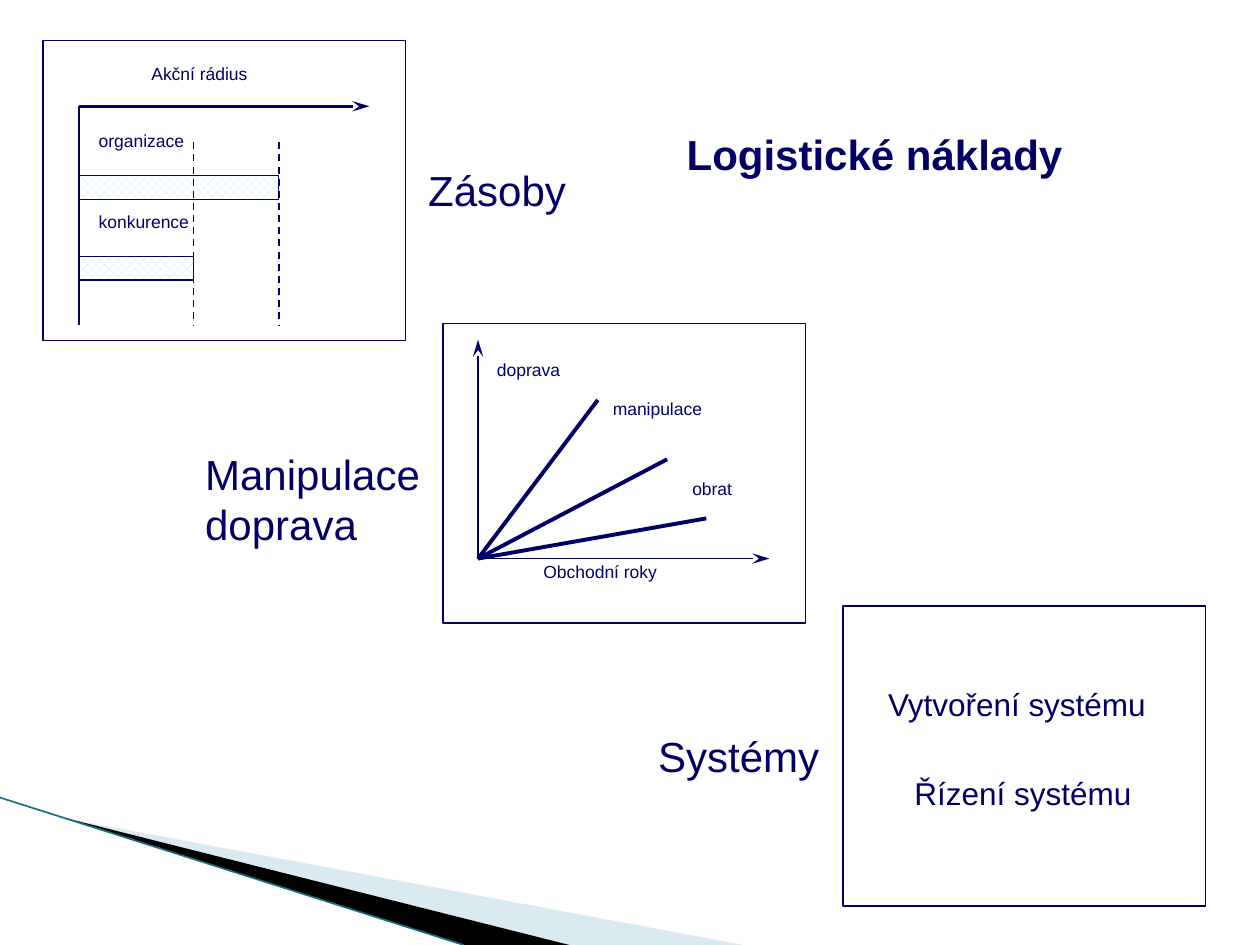
import dataclasses

import lxml.etree
import pptx
import pptx.dml.color
import pptx.enum.dml
import pptx.enum.shapes
import pptx.enum.text
import pptx.oxml.ns
import pptx.util

COLOURS = {
    "navy": "000066",
    "bar": "CCECFF",
    "white": "FFFFFF",
    "wedge": "A0CBDC",
    "black": "000000",
    "edge": "1B6E82",
}
FONT = "Arial"
RECTANGLE = pptx.enum.shapes.MSO_SHAPE.RECTANGLE
STRAIGHT = pptx.enum.shapes.MSO_CONNECTOR.STRAIGHT
DASH = pptx.enum.dml.MSO_LINE.DASH


@dataclasses.dataclass
class Box:
    """An area in inches whose inside is addressed by shares of its size."""
    left: float
    top: float
    width: float
    height: float

    def point(self, x, y):
        return (pptx.util.Inches(self.left + x * self.width),
                pptx.util.Inches(self.top + y * self.height))

    def size(self, x, y):
        return pptx.util.Inches(x * self.width), pptx.util.Inches(y * self.height)


PAGE = Box(0, 0, 10, 7.5)


def colour(name):
    return pptx.dml.color.RGBColor.from_string(COLOURS[name])


def add_element(parent, tag, **attributes):
    return lxml.etree.SubElement(parent, pptx.oxml.ns.qn(tag), **attributes)


def write(shape, text, size, bold=False, align=None):
    frame = shape.text_frame
    frame.word_wrap = False
    frame.auto_size = pptx.enum.text.MSO_AUTO_SIZE.SHAPE_TO_FIT_TEXT
    frame.vertical_anchor = pptx.enum.text.MSO_ANCHOR.TOP
    para = frame.paragraphs[0]
    para.alignment = align or pptx.enum.text.PP_ALIGN.LEFT
    for index, line in enumerate(text.split("\n")):
        if index:
            para.add_line_break()
        span = para.add_run()
        span.text = line
        span.font.name = FONT
        span.font.size = pptx.util.Pt(size)
        span.font.bold = bold
        span.font.color.rgb = colour("navy")


def add_label(shapes, box, text, x, y, width, size=10, align=None):
    height = 0.5 if size > 20 else 0.4
    label = shapes.add_textbox(*box.point(x, y), box.size(width, 0)[0],
                               pptx.util.Inches(height))
    write(label, text, size, align=align)


def add_line(shapes, box, start, end, width, name="navy", dash=None, arrow=False):
    line = shapes.add_connector(STRAIGHT, *box.point(*start), *box.point(*end))
    line.line.width = pptx.util.Pt(width)
    line.line.color.rgb = colour(name)
    if dash:
        line.line.dash_style = dash
    if arrow:
        add_element(line.line._get_or_add_ln(), "a:tailEnd", type="stealth", len="lg")
    add_element(line._element.spPr, "a:effectLst")


def add_rectangle(shapes, box, x=0, y=0, width=1, height=1, patterned=False):
    shape = shapes.add_shape(RECTANGLE, *box.point(x, y), *box.size(width, height))
    shape.shadow.inherit = False
    shape.line.color.rgb = colour("navy")
    shape.line.width = pptx.util.Pt(0.75)
    if patterned:
        shape.fill.patterned()
        shape.fill.pattern = pptx.enum.dml.MSO_PATTERN.PERCENT_50
        shape.fill.fore_color.rgb = colour("bar")
        shape.fill.back_color.rgb = colour("white")
    else:
        shape.fill.background()


def draw_corner(shapes, box):
    """Draw the slanted wedges at the bottom left of the page."""
    wedges = [
        ("wedge", 40, [(0.055, 0.867), (0.59, 1), (0.452, 1)]),
        ("black", 100, [(0.053, 0.866), (0.452, 1), (0.368, 1)]),
    ]
    for name, opacity, corners in wedges:
        first, *others = [box.point(*corner) for corner in corners]
        builder = shapes.build_freeform(*first)
        builder.add_line_segments(others, close=True)
        wedge = builder.convert_to_shape()
        wedge.shadow.inherit = False
        wedge.line.fill.background()
        wedge.fill.solid()
        wedge.fill.fore_color.rgb = colour(name)
        if opacity < 100:
            fill = wedge._element.spPr.find(".//" + pptx.oxml.ns.qn("a:srgbClr"))
            add_element(fill, "a:alpha", val=str(opacity * 1000))
    add_line(shapes, box, (0, 0.844), (0.368, 1), 0.95, "edge")


def draw_radius(shapes, box):
    """Draw the bars that compare the reach of two companies."""
    left, top, bottom = 0.1, 0.22, 0.95
    rows = [("organizace", 0.28, 0.49, 0.55), ("konkurence", 0.55, 0.52, 0.315)]
    add_line(shapes, box, (left, top), (left, bottom), 1.5)
    add_line(shapes, box, (left, top), (0.9, top), 1.5, arrow=True)
    for text, y, label_width, bar in rows:
        add_rectangle(shapes, box, left, y + 0.17, bar, 0.08, patterned=True)
        add_line(shapes, box, (left + bar, 0.34), (left + bar, bottom), 1, dash=DASH)
        add_label(shapes, box, text, 0.12, y, label_width)
    add_label(shapes, box, "Akční rádius", 0.265, 0.055, 0.55)
    add_rectangle(shapes, box)


def draw_growth(shapes, box):
    """Draw the cost lines that rise from one origin."""
    origin = (0.097, 0.785)
    add_rectangle(shapes, box)
    for end in [(0.9, origin[1]), (origin[0], 0.055)]:
        add_line(shapes, box, origin, end, 1, arrow=True)
    for end in [(0.427, 0.256), (0.618, 0.454), (0.726, 0.651)]:
        add_line(shapes, box, origin, end, 2.25)
    for label in [("doprava", 0.115, 0.1, 0.38), ("manipulace", 0.434, 0.23, 0.51),
                  ("obrat", 0.653, 0.496, 0.27), ("Obchodní roky", 0.243, 0.773, 0.64)]:
        add_label(shapes, box, *label)


def draw_systems(shapes, box):
    add_rectangle(shapes, box)
    add_label(shapes, box, "Vytvoření systému", 0.09, 0.244, 0.79, 18)
    add_label(shapes, box, "Řízení systému", 0.163, 0.538, 0.67, 18)


def draw_headings(page, box):
    title = page.shapes.title
    title.left, title.top = box.point(0.535, 0.129)
    title.width, title.height = box.size(0.35, 0.067)
    write(title, "Logistické náklady", 24, bold=True)
    add_label(page.shapes, box, "Zásoby", 0.33, 0.168, 0.14, 24)
    add_label(page.shapes, box, "Manipulace\ndoprava", 0.153, 0.468, 0.21, 24)
    add_label(page.shapes, box, "Systémy", 0.5, 0.767, 0.16, 24,
              pptx.enum.text.PP_ALIGN.RIGHT)


def main():
    deck = pptx.Presentation()
    deck.slide_width, deck.slide_height = PAGE.size(1, 1)
    page = deck.slides.add_slide(deck.slide_layouts[5])
    draw_corner(page.shapes, PAGE)
    draw_headings(page, PAGE)
    for step, draw in enumerate([draw_radius, draw_growth, draw_systems]):
        panel = Box(0.34 + 3.175 * step, 0.32 + 2.245 * step, 2.88, 2.38)
        draw(page.shapes.add_group_shape().shapes, panel)
    deck.save("out.pptx")


if __name__ == "__main__":
    main()
